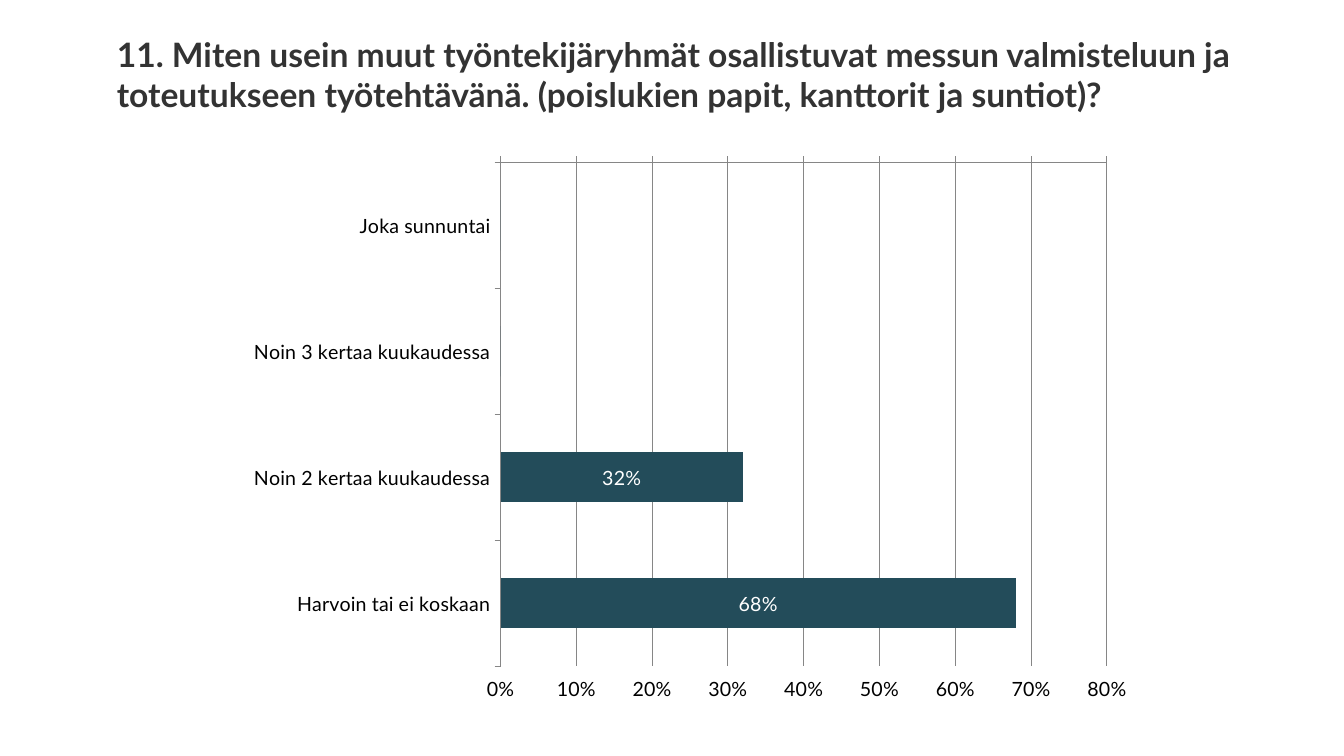
import pptx
import pptx.chart.data
import pptx.dml.color
import pptx.enum.chart
import pptx.enum.text
import pptx.util

Cm = pptx.util.Cm
Pt = pptx.util.Pt


class Deck:
    font = "Lato"
    colors = {"title": "333333", "text": "000000", "bar": "234C5A",
              "line": "868686", "label": "FFFFFF"}

    def __init__(self):
        self.prs = pptx.Presentation()
        self.prs.slide_width, self.prs.slide_height = Cm(33.87), Cm(19.05)
        self.s = self.prs.slides.add_slide(self.prs.slide_layouts[5])

    def rgb(self, name):
        return pptx.dml.color.RGBColor.from_string(self.colors[name])

    def style(self, font, size, color, bold=False):
        font.name, font.size, font.bold = self.font, Pt(size), bold
        font.color.rgb = self.rgb(color)

    def title(self, text, x, y, w, h):
        sp = self.s.shapes.title
        sp.left, sp.top, sp.width, sp.height = Cm(x), Cm(y), Cm(w), Cm(h)
        tf = sp.text_frame
        tf.word_wrap = True
        tf.auto_size = pptx.enum.text.MSO_AUTO_SIZE.NONE
        tf.vertical_anchor = pptx.enum.text.MSO_ANCHOR.MIDDLE
        p = tf.paragraphs[0]
        p.alignment = pptx.enum.text.PP_ALIGN.LEFT
        r = p.add_run()
        r.text = text
        self.style(r.font, 24, "title", True)

    def line(self, fmt):
        fmt.line.color.rgb = self.rgb("line")
        fmt.line.width = Pt(0.75)

    def bar_chart(self, shares, x, y, w, h):
        enums = pptx.enum.chart
        data = pptx.chart.data.CategoryChartData(number_format="0%")
        data.categories = list(shares)
        data.add_series("Series 1", list(shares.values()))
        chart = self.s.shapes.add_chart(
            enums.XL_CHART_TYPE.BAR_CLUSTERED,
            Cm(x), Cm(y), Cm(w), Cm(h), data).chart
        chart.has_legend = chart.has_title = False
        self.style(chart.font, 14, "text")

        cat, val = chart.category_axis, chart.value_axis
        for axis in (cat, val):
            axis.major_tick_mark = enums.XL_TICK_MARK.OUTSIDE
            axis.minor_tick_mark = enums.XL_TICK_MARK.NONE
            self.line(axis.format)
        cat.reverse_order = True
        cat.tick_label_position = enums.XL_TICK_LABEL_POSITION.LOW
        val.tick_label_position = enums.XL_TICK_LABEL_POSITION.HIGH
        val.minimum_scale, val.maximum_scale, val.major_unit = 0, 0.8, 0.1
        val.tick_labels.number_format = "0%"
        val.tick_labels.number_format_is_linked = False
        val.has_major_gridlines = True
        self.line(val.major_gridlines.format)

        plot = chart.plots[0]
        plot.gap_width = 150
        plot.vary_by_categories = False
        series = plot.series[0]
        series.format.fill.solid()
        series.format.fill.fore_color.rgb = self.rgb("bar")
        series.data_labels.show_value = False
        for i, share in enumerate(shares.values()):
            if share:
                label = series.points[i].data_label
                self.style(label.font, 14, "label")
                label.position = enums.XL_LABEL_POSITION.CENTER


def main():
    deck = Deck()
    deck.title("11. Miten usein muut työntekijäryhmät osallistuvat messun "
               "valmisteluun ja toteutukseen työtehtävänä. (poislukien papit, "
               "kanttorit ja suntiot)?", 2.69, 0.71, 29.39, 2.31)
    deck.bar_chart({"Joka sunnuntai": 0,
                    "Noin 3 kertaa kuukaudessa": 0,
                    "Noin 2 kertaa kuukaudessa": 0.32,
                    "Harvoin tai ei koskaan": 0.68},
                   5.94, 3.81, 22.91, 14.12)
    deck.prs.save("out.pptx")


if __name__ == "__main__":
    main()
